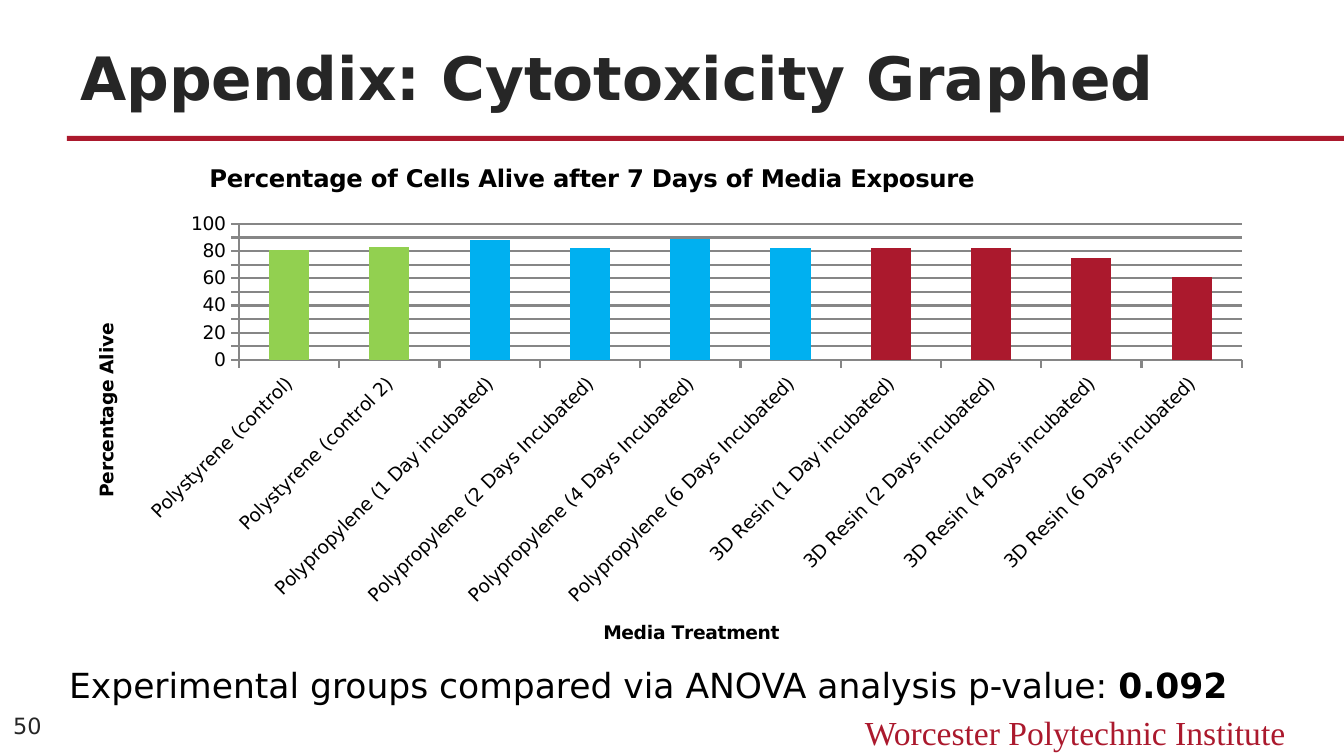
from lxml import etree
from pptx import Presentation
from pptx.chart.data import CategoryChartData
from pptx.dml.color import RGBColor
from pptx.enum.chart import XL_CHART_TYPE as ChartType, XL_TICK_MARK as TickMark
from pptx.enum.shapes import MSO_SHAPE as Preset
from pptx.enum.text import MSO_ANCHOR as Anchor, PP_ALIGN as Align
from pptx.oxml.ns import qn
from pptx.util import Pt

PX = 914400 / 134.4
THEME = {
    "sans": "DejaVu Sans", "serif": "Times New Roman",
    "crimson": "AB192D", "dark": "262626", "black": "000000",
    "green": "92D050", "blue": "00B0F0", "grey": "868686",
    "title": 32, "body": 18.5, "footer": 18, "number": 12,
    "chart": 10, "chart_title": 13,
}
CHART_BOX = (67, 142, 1199, 530)


def add_text(box, runs, size, color, font="sans", align=Align.LEFT,
             anchor=Anchor.TOP, spacing=1.0):
    """Add a one-paragraph text box; runs are (text, bold) pairs."""
    frame = slide.shapes.add_textbox(*[round(v * PX) for v in box]).text_frame
    frame.word_wrap = True
    frame.vertical_anchor = anchor
    paragraph = frame.paragraphs[0]
    paragraph.alignment = align
    paragraph.line_spacing = spacing
    for text, bold in runs:
        run = paragraph.add_run()
        run.text = text
        run.font.color.rgb = RGBColor.from_string(THEME[color])
        formats = {"name": THEME[font], "size": Pt(THEME[size]), "bold": bold}
        for name, value in formats.items():
            setattr(run.font, name, value)


def place(element, index, left, top, width=None, height=None):
    """Give a chart part a fixed position, in slide px."""
    for old in element.findall(qn("c:layout")):
        element.remove(old)
    layout = etree.Element(qn("c:layout"))
    element.insert(index, layout)
    manual = etree.SubElement(layout, qn("c:manualLayout"))
    x, y, w, h = CHART_BOX
    values = {"xMode": "edge", "yMode": "edge",
              "x": round((left - x) / w, 4), "y": round((top - y) / h, 4)}
    if width:
        values = {"layoutTarget": "inner", **values,
                  "w": round(width / w, 4), "h": round(height / h, 4)}
    for tag, value in values.items():
        etree.SubElement(manual, qn(f"c:{tag}")).set("val", str(value))


presentation = Presentation()
presentation.slide_width = round(1344 * PX)
presentation.slide_height = round(756 * PX)
slide = presentation.slides.add_slide(presentation.slide_layouts[6])

# Heading rule and footer
rule = slide.shapes.add_shape(Preset.RECTANGLE, *[round(v * PX) for v in (67, 136, 1277, 5)])
rule.shadow.inherit = False
rule.fill.solid()
rule.fill.fore_color.rgb = RGBColor.from_string(THEME["crimson"])
rule.line.fill.background()
add_text((806, 705, 493, 54), [("Worcester Polytechnic Institute", False)],
         "footer", "crimson", font="serif", align=Align.RIGHT)
add_text((67, 30, 1210, 89), [("Appendix: Cytotoxicity Graphed", True)],
         "title", "dark", anchor=Anchor.BOTTOM)
add_text((0, 704, 67, 43), [("50", False)], "number", "dark", anchor=Anchor.MIDDLE)

# Survival chart: name, percentage alive, bar colour
treatments = [
    ("Polystyrene (control)", 81, "green"),
    ("Polystyrene (control 2)", 83, "green"),
    ("Polypropylene (1 Day incubated)", 88, "blue"),
    ("Polypropylene (2 Days Incubated)", 82, "blue"),
    ("Polypropylene (4 Days Incubated)", 89, "blue"),
    ("Polypropylene (6 Days Incubated)", 82, "blue"),
    ("3D Resin (1 Day incubated)", 82, "crimson"),
    ("3D Resin (2 Days incubated)", 82, "crimson"),
    ("3D Resin (4 Days incubated)", 75, "crimson"),
    ("3D Resin (6 Days incubated)", 61, "crimson"),
]
data = CategoryChartData()
data.categories = [name for name, _, _ in treatments]
data.add_series("Series 1", [alive for _, alive, _ in treatments])
chart = slide.shapes.add_chart(
    ChartType.COLUMN_CLUSTERED, *[round(v * PX) for v in CHART_BOX], data).chart
chart.has_legend = False
chart.font.name = THEME["sans"]
chart.font.size = Pt(THEME["chart"])
chart.font.color.rgb = RGBColor.from_string(THEME["black"])

plot = chart.plots[0]
plot.gap_width = 150
plot.vary_by_categories = False
for index, (_, _, color) in enumerate(treatments):
    fill = plot.series[0].points[index].format.fill
    fill.solid()
    fill.fore_color.rgb = RGBColor.from_string(THEME[color])

category_axis, value_axis = chart.category_axis, chart.value_axis
scale = {"minimum_scale": 0, "maximum_scale": 100, "major_unit": 10,
         "has_major_gridlines": True}
for name, value in scale.items():
    setattr(value_axis, name, value)
for axis in (category_axis, value_axis):
    axis.major_tick_mark = TickMark.OUTSIDE
    axis.tick_labels.font.size = Pt(THEME["chart"])
for line in (category_axis.format.line, value_axis.format.line,
             value_axis.major_gridlines.format.line):
    line.color.rgb = RGBColor.from_string(THEME["grey"])
    line.width = Pt(1.25)
category_axis._element.find(qn("c:txPr")).find(qn("a:bodyPr")).set("rot", "-2700000")

titles = [
    (chart, "chart_title", "Percentage of Cells Alive after 7 Days of Media Exposure", 205, 158),
    (category_axis, "chart", "Media Treatment", 600, 617),
    (value_axis, "chart", "Percentage Alive", 91, 320),
]
for owner, size, text, left, top in titles:
    title = owner.chart_title if owner is chart else owner.axis_title
    title.text_frame.text = text
    font = title.text_frame.paragraphs[0].runs[0].font
    font.color.rgb = RGBColor.from_string(THEME["black"])
    formats = {"name": THEME["sans"], "size": Pt(THEME[size]), "bold": True}
    for name, value in formats.items():
        setattr(font, name, value)
    if owner is value_axis:
        title._element.find(".//" + qn("a:bodyPr")).set("rot", "-5400000")
    place(title._element, 1, left, top)
place(chart._chartSpace.find(".//" + qn("c:plotArea")), 0, 239, 224, 1003, 136)

add_text((56, 664, 1266, 51),
         [("Experimental groups compared via ANOVA analysis p-value: ", False), ("0.092", True)],
         "body", "black", spacing=0.85)

presentation.save("out.pptx")
